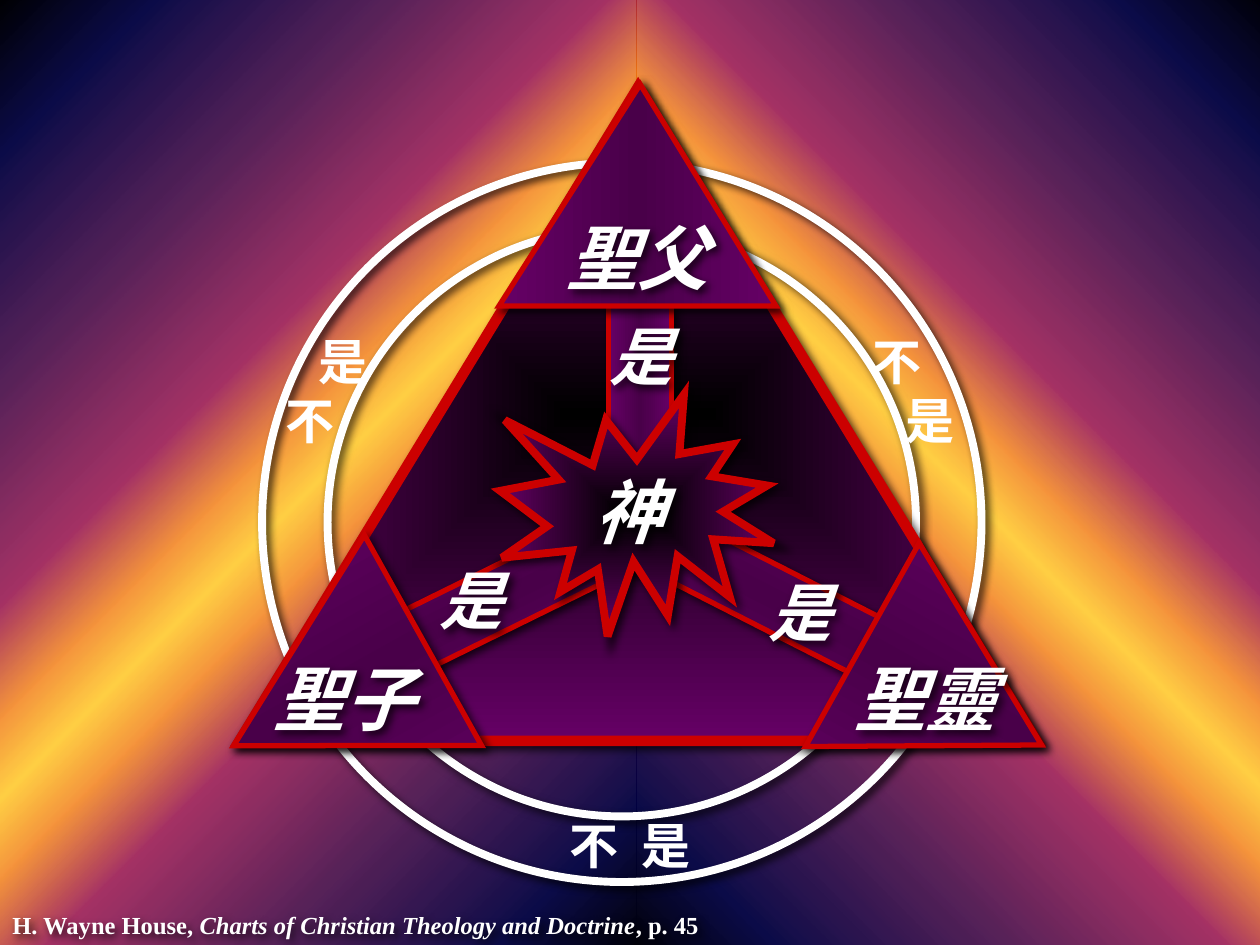
from dataclasses import dataclass
from typing import Optional

import lxml.etree
import pptx
import pptx.dml.color
import pptx.enum.shapes
import pptx.enum.text
import pptx.oxml.ns
import pptx.util

Inches = pptx.util.Inches
Pt = pptx.util.Pt
qn = pptx.oxml.ns.qn
Kind = pptx.enum.shapes.MSO_SHAPE
Align = pptx.enum.text.PP_ALIGN

FONT = "Times New Roman"
WHITE = "FFFFFF"
RED = "CC0000"


@dataclass(frozen=True)
class Gradient:
    """Stops are (position %, colour, opacity %); no angle means from the centre outwards."""
    stops: tuple
    angle: Optional[float] = None


@dataclass(frozen=True)
class Figure:
    kind: int
    frame: tuple
    gradient: Optional[Gradient] = None
    line: str = RED
    width: float = 3
    rotation: float = 0
    adjustment: Optional[float] = None


@dataclass(frozen=True)
class Label:
    text: str
    frame: tuple
    size: float
    align: int = Align.LEFT


@dataclass(frozen=True)
class Denial:
    """Ring label; each line is (text, left indent in inches)."""
    lines: tuple
    frame: tuple


half_sunset = ((0, "000000", 100), (10, "000040", 95), (25, "400040", 86),
               (38, "8F0040", 80), (45, "F27300", 76))
SUNSET = half_sunset + ((50, "FFBF00", 73),) + tuple(
    (100 - position, colour, opacity) for position, colour, opacity in reversed(half_sunset))
PURPLE = ((0, "660066", 100), (50, "490049", 100), (100, "660066", 100))
GLOW = Gradient(((0, "000000", 100), (100, "660066", 100)))
ACROSS = Gradient(PURPLE, 0)
DOWN = Gradient(PURPLE, 90)

BACKDROP = (
    Figure(Kind.RECTANGLE, (5.05, 0, 5.11, 7.69), Gradient(SUNSET, 315), width=0),
    Figure(Kind.RECTANGLE, (-0.06, 0, 5.11, 7.69), Gradient(SUNSET, 45), width=0),
)
DIAGRAM = (
    Figure(Kind.OVAL, (2.08, 1.29, 5.71, 5.71), line=WHITE, width=4.5),
    Figure(Kind.OVAL, (2.6, 1.81, 4.67, 4.67), line=WHITE, width=4.5),
    Figure(Kind.ISOSCELES_TRIANGLE, (1.9, 0.69, 6.33, 5.19), GLOW, width=6),
    Figure(Kind.RECTANGLE, (5.11, 4.57, 2.33, 0.5), DOWN, rotation=27),
    Figure(Kind.RECTANGLE, (3.17, 4.42, 1.92, 0.5), DOWN, rotation=333.8),
    Figure(Kind.RECTANGLE, (4.12, 2.54, 1.92, 0.5), DOWN, rotation=90),
    Figure(Kind.ISOSCELES_TRIANGLE, (6.63, 4.7, 1.85, 1.63), ACROSS, rotation=119.2),
    Figure(Kind.ISOSCELES_TRIANGLE, (1.65, 4.64, 1.91, 1.72), ACROSS, rotation=240.9),
    Figure(Kind.ISOSCELES_TRIANGLE, (3.96, 0.67, 2.2, 1.76), ACROSS, adjustment=0.51),
    Figure(Kind.EXPLOSION1, (3.97, 3.13, 2.17, 1.92), GLOW, width=4.5),
)
LABELS = (
    Label("是", (4.5, 2.47, 1.17, 0.7), 36, Align.CENTER),
    Label("是", (6, 4.5, 1.17, 0.7), 36),
    Label("是", (2.92, 4.41, 1.17, 0.7), 36, Align.RIGHT),
    Label("聖子", (2.08, 5.15, 2, 0.77), 40),
    Label("神", (4.25, 3.67, 1.5, 0.77), 40, Align.CENTER),
    Label("聖父", (4.06, 1.65, 2, 0.77), 40, Align.CENTER),
    Label("聖靈", (6, 5.15, 2, 0.77), 40, Align.RIGHT),
)
DENIALS = (
    Denial((("不", 0), ("是", 0.26)), (6.83, 2.58, 1.25, 1.03)),
    Denial((("是", 0.26), ("不", 0)), (2.17, 2.58, 1.25, 1.03)),
    Denial((("不\t是", 0),), (4.42, 6.42, 1.25, 0.57)),
)
CITATION = (("H. Wayne House, ", False),
            ("Charts of Christian Theology and Doctrine", True),
            (", p. 45", False))


def rgb(colour: str):
    return pptx.dml.color.RGBColor.from_string(colour)


def add_node(parent, tag: str, **attributes):
    return lxml.etree.SubElement(
        parent, qn(tag), {name: str(value) for name, value in attributes.items()})


def add_colour(parent, colour: str, opacity: float) -> None:
    node = add_node(parent, "a:srgbClr", val=colour)
    if opacity < 100:
        add_node(node, "a:alpha", val=int(opacity * 1000))


def apply_gradient(shape, gradient: Gradient) -> None:
    shape.fill.gradient()
    fill = shape._element.spPr.find(qn("a:gradFill"))
    fill.clear()
    fill.set("rotWithShape", "1")
    stops = add_node(fill, "a:gsLst")
    for position, colour, opacity in gradient.stops:
        add_colour(add_node(stops, "a:gs", pos=position * 1000), colour, opacity)
    if gradient.angle is None:
        centre = add_node(fill, "a:path", path="shape")
        add_node(centre, "a:fillToRect", l=50000, t=50000, r=50000, b=50000)
    else:
        add_node(fill, "a:lin", ang=int(gradient.angle * 60000), scaled=0)


def cast_shadow(shape) -> None:
    shape.shadow.inherit = False
    effects = shape._element.spPr.find(qn("a:effectLst"))
    shadow = add_node(effects, "a:outerShdw", blurRad=Pt(5), dist=Pt(3),
                      dir=45 * 60000, algn="ctr", rotWithShape=0)
    add_colour(shadow, "000000", 75)


def draw_figure(shapes, figure: Figure):
    shape = shapes.add_shape(figure.kind, *map(Inches, figure.frame))
    shape.shadow.inherit = False
    shape.rotation = figure.rotation
    if figure.adjustment is not None:
        shape.adjustments[0] = figure.adjustment
    if figure.gradient:
        apply_gradient(shape, figure.gradient)
    else:
        shape.fill.background()
    if figure.width:
        shape.line.color.rgb = rgb(figure.line)
        shape.line.width = Pt(figure.width)
        add_node(shape._element.spPr.find(qn("a:ln")), "a:miter", lim=800000)
    else:
        shape.line.fill.background()
    return shape


def add_box(shapes, frame: tuple):
    box = shapes.add_textbox(*map(Inches, frame))
    box.text_frame.word_wrap = True
    box.text_frame.auto_size = pptx.enum.text.MSO_AUTO_SIZE.SHAPE_TO_FIT_TEXT
    return box


def set_font(para, size: float) -> None:
    para.font.name = FONT
    para.font.size = Pt(size)
    para.font.bold = True
    para.font.color.rgb = rgb(WHITE)


def draw_label(shapes, label: Label) -> None:
    box = add_box(shapes, label.frame)
    cast_shadow(box)
    para = box.text_frame.paragraphs[0]
    para.text = label.text
    para.alignment = label.align
    set_font(para, label.size)
    para.font.italic = True


def draw_denial(shapes, denial: Denial) -> None:
    frame = add_box(shapes, denial.frame).text_frame
    for index, (text, indent) in enumerate(denial.lines):
        para = frame.add_paragraph() if index else frame.paragraphs[0]
        para.text = text
        properties = para._p.get_or_add_pPr()
        properties.set("marL", str(Inches(indent)))
        if "\t" in text:
            add_node(add_node(properties, "a:tabLst"), "a:tab", pos=Inches(0.57), algn="l")
        set_font(para, 28)


def draw_citation(shapes) -> None:
    box = add_box(shapes, (0, 7.17, 6.5, 0.33))
    cast_shadow(box)
    para = box.text_frame.paragraphs[0]
    for text, italic in CITATION:
        span = para.add_run()
        span.text = text
        span.font.italic = italic
    set_font(para, 14)


def main() -> None:
    deck = pptx.Presentation()
    deck.slide_width, deck.slide_height = Inches(10), Inches(7.5)
    shapes = deck.slides.add_slide(deck.slide_layouts[6]).shapes
    for figure in BACKDROP:
        draw_figure(shapes, figure)
    for figure in DIAGRAM:
        cast_shadow(draw_figure(shapes, figure))
    for label in LABELS:
        draw_label(shapes, label)
    draw_citation(shapes)
    for denial in DENIALS:
        draw_denial(shapes, denial)
    deck.save("out.pptx")


if __name__ == "__main__":
    main()
